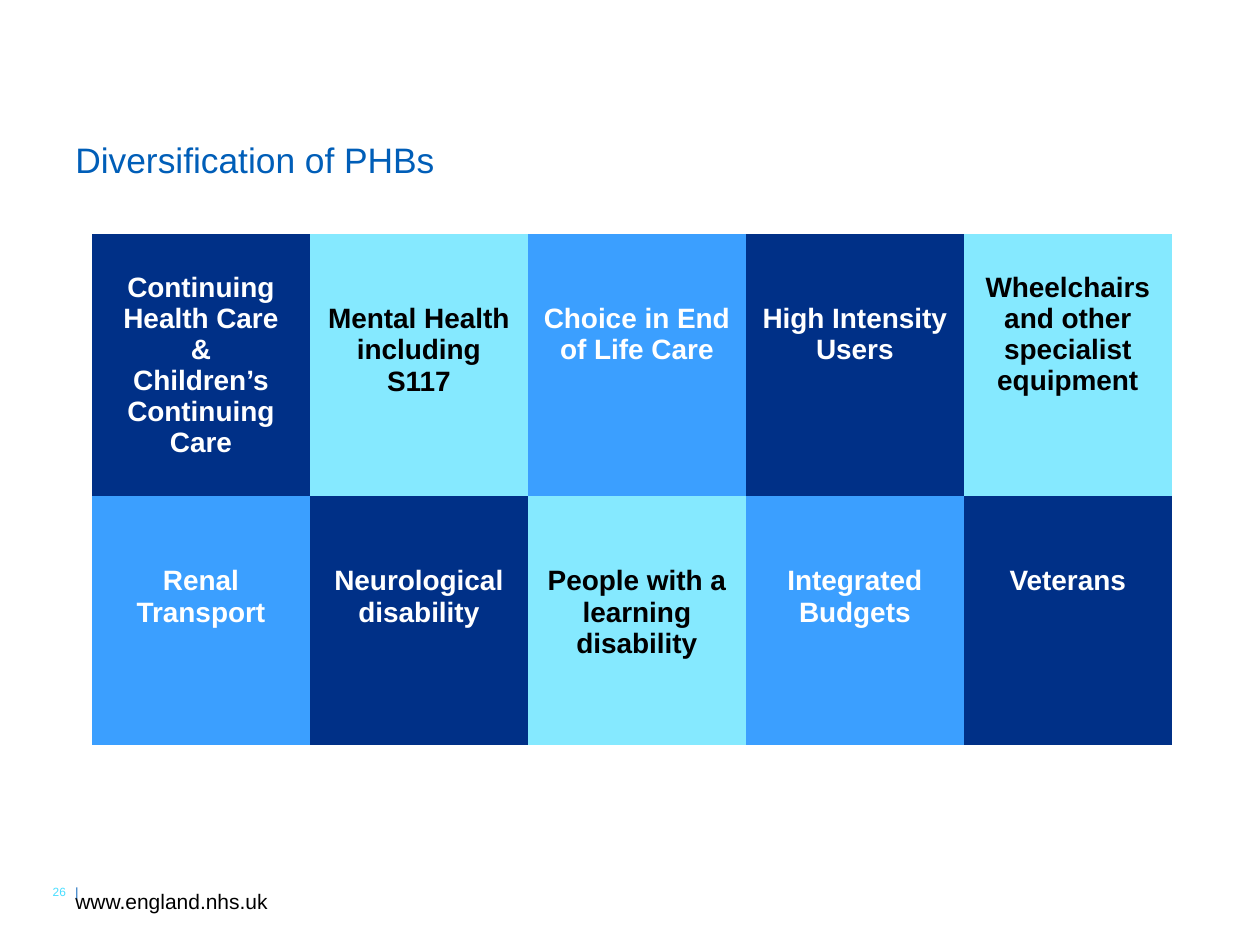
from dataclasses import dataclass

from lxml.etree import SubElement
from pptx import Presentation
from pptx.dml.color import RGBColor
from pptx.enum.text import MSO_ANCHOR, MSO_AUTO_SIZE, PP_ALIGN
from pptx.oxml.ns import qn
from pptx.util import Inches, Pt

NAVY, AQUA, SKY = "003087", "85E9FF", "3B9FFF"
BLUE, CYAN, BLACK, WHITE = "005EB8", "49DEFF", "000000", "FFFFFF"
TILE_FILLS = (NAVY, AQUA, SKY)
COLUMN_WIDTHS = (1.73, 1.73, 1.73, 1.73, 1.65)
ROW_HEIGHTS = (2.08, 1.97)
LINE_HEIGHT = 0.25


@dataclass
class Tile:
    lines: tuple[str, ...]
    drop: int = 2  # text lines left free above the wording


TILES = (
    Tile(("Continuing Health Care", "&", "Children’s Continuing Care"), drop=1),
    Tile(("Mental Health", "including S117")),
    Tile(("Choice in End of Life Care",)),
    Tile(("High Intensity Users",)),
    Tile(("Wheelchairs and other specialist equipment",), drop=1),
    Tile(("Renal Transport",)),
    Tile(("Neurological disability",)),
    Tile(("People with a learning disability",)),
    Tile(("Integrated Budgets",)),
    Tile(("Veterans",)),
)


def colour(value: str) -> RGBColor:
    return RGBColor.from_string(value)


def style(font, size: float, shade: str, bold: bool = False) -> None:
    font.name = "Arial"
    font.size = Pt(size)
    font.bold = bold
    font.color.rgb = colour(shade)


def add_text_box(page, left: float, top: float, width: float, height: float,
                 anchor=MSO_ANCHOR.MIDDLE):
    """Add a wrapping text box and return its first paragraph."""
    box = page.shapes.add_textbox(Inches(left), Inches(top), Inches(width), Inches(height))
    box.text_frame.word_wrap = True
    box.text_frame.auto_size = MSO_AUTO_SIZE.NONE
    box.text_frame.vertical_anchor = anchor
    return box.text_frame.paragraphs[0]


def add_label(page, text: str, size: float, shade: str, *place: float) -> None:
    para = add_text_box(page, *place)
    para.text = text
    style(para.font, size, shade)


def add_page_number(page, number: str) -> None:
    para = add_text_box(page, 0.32, 6.97, 0.71, 0.21, MSO_ANCHOR.TOP)
    tabs = SubElement(para._p.get_or_add_pPr(), qn("a:tabLst"))
    SubElement(tabs, qn("a:tab"), pos=str(Inches(0.18)), algn="l")
    for text, shade in ((number + "\t", CYAN), ("|", BLUE)):
        span = para.add_run()
        span.text = text
        style(span.font, 6.8, shade)


def fill_tile(cell, tile: Tile, fill: str) -> None:
    cell.fill.solid()
    cell.fill.fore_color.rgb = colour(fill)
    cell.margin_top = Inches(0.05 + tile.drop * LINE_HEIGHT)
    cell.text_frame.text = "\n".join(tile.lines)
    for para in cell.text_frame.paragraphs:
        para.alignment = PP_ALIGN.CENTER
        style(para.font, 16, BLACK if fill == AQUA else WHITE, bold=True)


def add_tile_table(page) -> None:
    frame = page.shapes.add_table(
        len(ROW_HEIGHTS), len(COLUMN_WIDTHS), Inches(0.73), Inches(1.86),
        Inches(sum(COLUMN_WIDTHS)), Inches(sum(ROW_HEIGHTS)))
    table = frame.table
    table.first_row = table.horz_banding = False
    # Plain style without grid lines
    table._tbl.tblPr.find(qn("a:tableStyleId")).text = "{2D5ABB26-0587-4C30-8999-92F81FD0307C}"
    for column, width in zip(table.columns, COLUMN_WIDTHS):
        column.width = Inches(width)
    for row, height in zip(table.rows, ROW_HEIGHTS):
        row.height = Inches(height)
    # The three fills take turns along the rows
    for index, (cell, tile) in enumerate(zip(table.iter_cells(), TILES)):
        fill_tile(cell, tile, TILE_FILLS[index % len(TILE_FILLS)])


def main() -> None:
    deck = Presentation()
    deck.slide_width, deck.slide_height = Inches(10), Inches(7.5)
    page = deck.slides.add_slide(deck.slide_layouts[6])

    # Footer
    add_label(page, "www.england.nhs.uk", 12, BLACK, 0.5, 6.95, 2.33, 0.4)
    add_page_number(page, "26")

    # Title and table
    add_label(page, "Diversification of PHBs", 20.2, BLUE, 0.5, 0.93, 7.18, 0.67)
    add_tile_table(page)

    deck.save("out.pptx")


if __name__ == "__main__":
    main()
